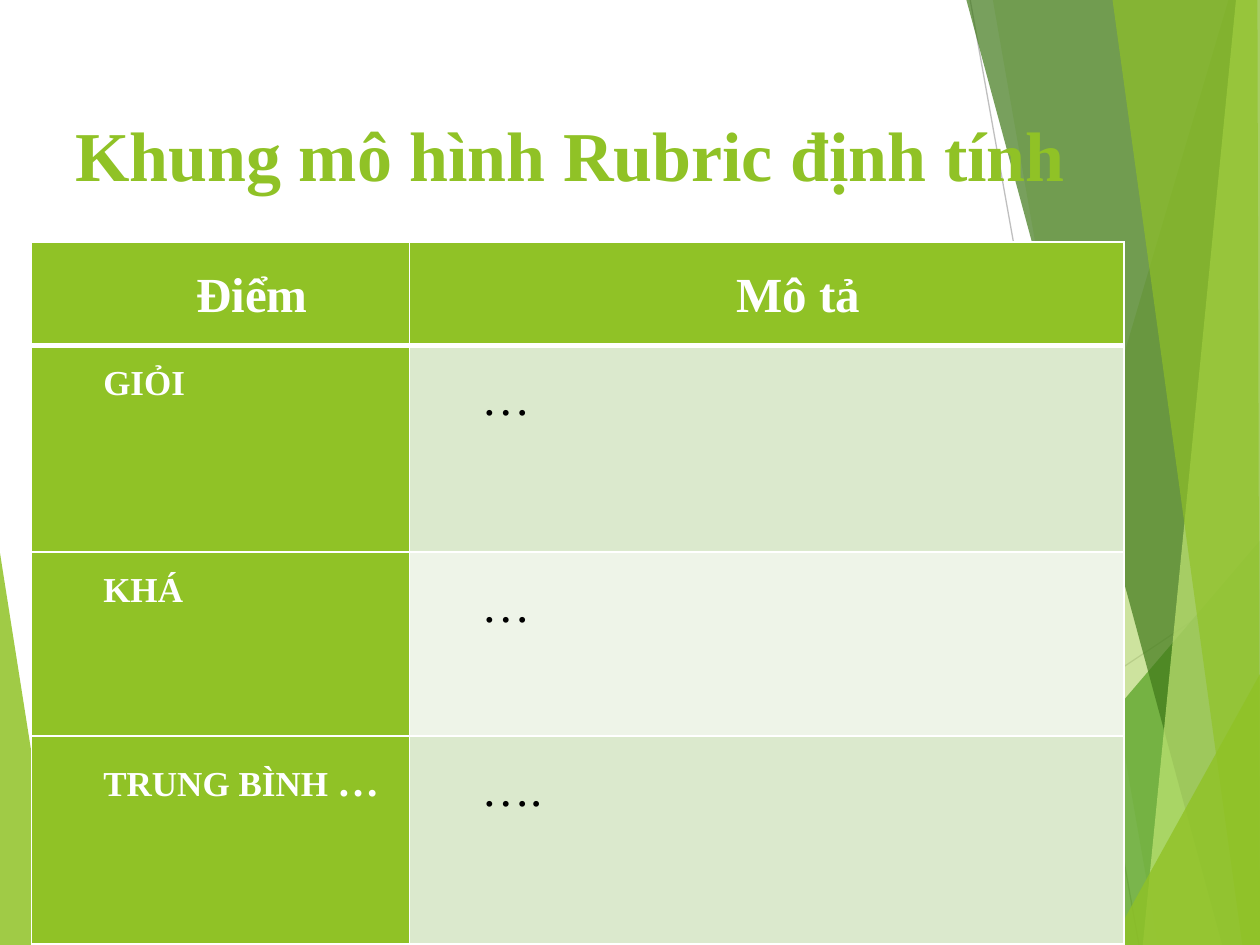
from dataclasses import dataclass
from typing import NamedTuple

from lxml.etree import SubElement
from pptx import Presentation
from pptx.dml.color import RGBColor
from pptx.enum.shapes import MSO_CONNECTOR
from pptx.enum.text import MSO_ANCHOR, PP_ALIGN
from pptx.oxml.ns import qn
from pptx.util import Emu, Inches, Pt


@dataclass(frozen=True)
class Theme:
    font: str = "Times New Roman"
    lime: str = "90C226"
    green: str = "54A021"
    dark: str = "3F7819"
    pale: str = "C0E474"
    white: str = "FFFFFF"
    black: str = "000000"
    odd: str = "DBE9CD"
    even: str = "EEF4E8"
    title: int = 40
    head: int = 28
    label: int = 20
    dots: int = 24


class Facet(NamedTuple):
    color: str
    alpha: int
    points: list


class Ray(NamedTuple):
    color: str
    start: tuple
    end: tuple


class Part(NamedTuple):
    text: str
    size: int
    color: str
    bold: bool = True


class Level(NamedTuple):
    label: list
    note: str
    fill: str


T = Theme()
WIDE, HIGH = Inches(10), Inches(7.5)

# Every place and length below is a percentage of the slide's size.
LEFT = Facet(T.lime, 85, [(0, 58.53), (4.9, 100), (0, 100)])
RAYS = [
    Ray("D9D9D9", (56.1, 100), (100, 60.93)),
    Ray("BFBFBF", (77, 0), (90.4, 100)),
]
RIGHT = [
    Facet(T.lime, 30, [(97.5, 0), (75.4, 100), (100, 100), (100, 0)]),
    Facet(T.lime, 20, [(78.8, 0), (91.9, 100), (100, 100), (100, 0)]),
    Facet(T.green, 72, [(72.6, 100), (100, 57.2), (100, 100)]),
    Facet(T.dark, 70, [(76.7, 0), (97, 100), (100, 100), (100, 0)]),
    Facet(T.pale, 70, [(98.1, 0), (90.7, 100), (100, 100), (100, 0)]),
    Facet(T.lime, 65, [(88.3, 0), (98.6, 100), (100, 100), (99.8, 0)]),
    Facet(T.lime, 80, [(88.1, 100), (100, 71.33), (100, 100)]),
]
TITLE_BOX = (5, 10.27, 90, 12)
TABLE_AT = (2.5, 25.6)
COLS = [30, 56.7]
ROWS = [10.93, 21.87, 19.47, 22]
HEADS = ["Điểm", "Mô tả"]
LEVELS = [
    Level([Part("GIỎI", T.label, T.white)], "…", T.odd),
    Level([Part("KHÁ", T.label, T.white)], "…", T.even),
    Level([Part("TRUNG BÌNH ", T.label, T.white),
           Part("…", T.dots, T.white)], "….", T.odd),
]


def across(share: float) -> Emu:
    return Emu(round(WIDE * share / 100))


def down(share: float) -> Emu:
    return Emu(round(HIGH * share / 100))


def spot(point: tuple) -> tuple:
    return across(point[0]), down(point[1])


def rgb(color: str) -> RGBColor:
    return RGBColor.from_string(color)


def paint(fill, color: str) -> None:
    fill.solid()
    fill.fore_color.rgb = rgb(color)


def draw_facet(slide, facet: Facet) -> None:
    first, *rest = map(spot, facet.points)
    pen = slide.shapes.build_freeform(*first)
    pen.add_line_segments(rest, close=True)
    shape = pen.convert_to_shape()
    shape.shadow.inherit = False
    shape.line.fill.background()
    paint(shape.fill, facet.color)
    tone = shape._element.spPr.find(qn("a:solidFill"))[0]
    SubElement(tone, qn("a:alpha"), val=str(facet.alpha * 1000))


def draw_ray(slide, ray: Ray) -> None:
    line = slide.shapes.add_connector(
        MSO_CONNECTOR.STRAIGHT, *spot(ray.start), *spot(ray.end))
    line.line.width = Pt(0.75)
    line.line.color.rgb = rgb(ray.color)
    SubElement(line._element.spPr, qn("a:effectLst"))


def write(para, parts: list) -> None:
    for part in parts:
        run = para.add_run()
        run.text = part.text
        look = {"name": T.font, "size": Pt(part.size), "bold": part.bold}
        for key, value in look.items():
            setattr(run.font, key, value)
        run.font.color.rgb = rgb(part.color)


def draw_title(slide, text: str) -> None:
    x, y, w, h = TITLE_BOX
    box = slide.shapes.add_textbox(across(x), down(y), across(w), down(h))
    frame = box.text_frame
    frame.word_wrap = True
    frame.vertical_anchor = MSO_ANCHOR.MIDDLE
    write(frame.paragraphs[0], [Part(text, T.title, T.lime)])


def edge(cell, widths: dict) -> None:
    """Add white borders, given as points per side."""
    props = cell._tc.get_or_add_tcPr()
    for side, width in widths.items():
        line = SubElement(props, qn(f"a:ln{side}"), w=str(Pt(width)))
        fill = SubElement(line, qn("a:solidFill"))
        SubElement(fill, qn("a:srgbClr"), val=T.white)


def fill_cell(cell, parts: list, color: str, align, top: int, base: int) -> None:
    edge(cell, {"L": 1, "R": 1, "T": top, "B": base})
    paint(cell.fill, color)
    room = {"margin_left": Inches(0.07), "margin_right": Inches(0.07),
            "margin_top": 0, "margin_bottom": 0}
    for key, value in room.items():
        setattr(cell, key, value)
    para = cell.text_frame.paragraphs[0]
    para.alignment = align
    para.line_spacing = 1.5
    props = para._p.get_or_add_pPr()
    props.set("marL", str(Inches(0.5)))
    props.set("indent", "0")
    write(para, parts)


def draw_table(slide) -> None:
    table = slide.shapes.add_table(
        len(ROWS), len(COLS), *spot(TABLE_AT),
        across(sum(COLS)), down(sum(ROWS))).table
    for col, share in zip(table.columns, COLS):
        col.width = across(share)
    for row, share in zip(table.rows, ROWS):
        row.height = down(share)
    for col, text in enumerate(HEADS):
        fill_cell(table.cell(0, col), [Part(text, T.head, T.white)],
                  T.lime, PP_ALIGN.CENTER, 1, 3)
    for row, level in enumerate(LEVELS, 1):
        top = 3 if row == 1 else 1
        note = [Part(level.note, T.head, T.black, False)]
        for col, (parts, color) in enumerate(
                [(level.label, T.lime), (note, level.fill)]):
            fill_cell(table.cell(row, col), parts, color,
                      PP_ALIGN.LEFT, top, 1)


def main() -> None:
    deck = Presentation()
    deck.slide_width, deck.slide_height = WIDE, HIGH
    slide = deck.slides.add_slide(deck.slide_layouts[6])
    draw_facet(slide, LEFT)
    for ray in RAYS:
        draw_ray(slide, ray)
    for facet in RIGHT:
        draw_facet(slide, facet)
    draw_title(slide, "Khung mô hình Rubric định tính")
    draw_table(slide)
    deck.save("out.pptx")


if __name__ == "__main__":
    main()
